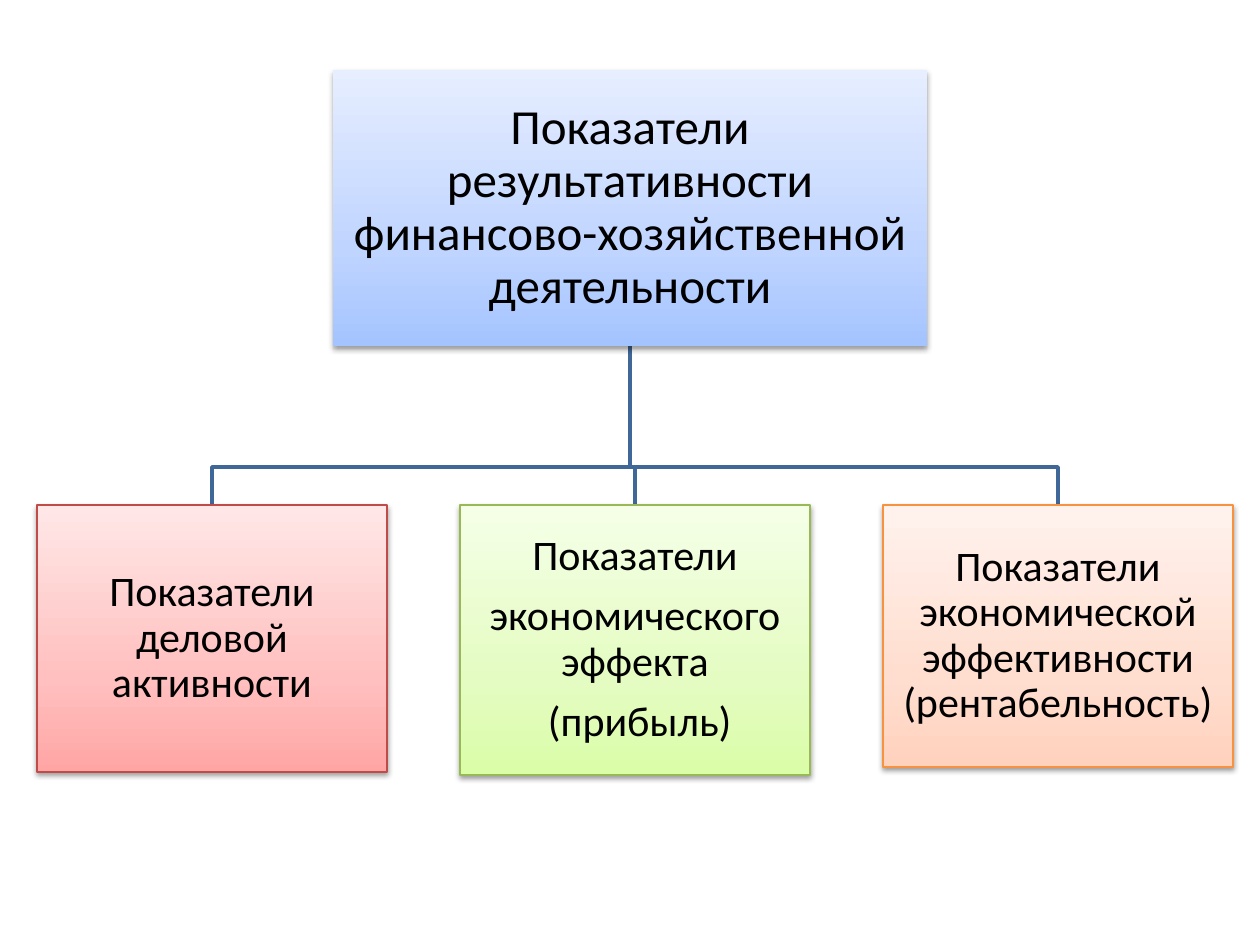
from copy import deepcopy

from lxml import etree
from pptx import Presentation
from pptx.dml.color import RGBColor
from pptx.enum.shapes import MSO_SHAPE as Shape
from pptx.enum.text import MSO_ANCHOR as Anchor, PP_ALIGN as Align
from pptx.oxml.ns import qn
from pptx.util import Emu, Pt

PX = 914400 / 126
SLIDE_W, SLIDE_H = 1260, 945

WHITE = RGBColor(0xFF, 0xFF, 0xFF)
BLACK = RGBColor(0x00, 0x00, 0x00)
BRANCH = RGBColor(0x3F, 0x67, 0x97)
RED_LINE = RGBColor(0xBF, 0x4C, 0x48)
GREEN_LINE = RGBColor(0x98, 0xB9, 0x55)
ORANGE_LINE = RGBColor(0xF6, 0x92, 0x40)
# Gradients run from bottom to top.
BLUE = RGBColor(0xA4, 0xC4, 0xFF), RGBColor(0xBF, 0xD4, 0xFF), RGBColor(0xE6, 0xEE, 0xFF)
RED = RGBColor(0xFF, 0xA6, 0xA5), RGBColor(0xFF, 0xC0, 0xBF), RGBColor(0xFF, 0xE7, 0xE7)
GREEN = RGBColor(0xDA, 0xFD, 0xA7), RGBColor(0xE4, 0xFC, 0xC2), RGBColor(0xF5, 0xFF, 0xE7)
ORANGE = RGBColor(0xFF, 0xD2, 0xBD), RGBColor(0xFF, 0xDE, 0xD0), RGBColor(0xFF, 0xF2, 0xED)
GRADIENT_POSITIONS = 0, 0.35, 1

ROOT_X, ROOT_Y, ROOT_W, ROOT_H = 333, 70, 594, 276
CHILD_X, CHILD_Y, CHILD_W, CHILD_PITCH = 37, 505, 350, 423
FORK_Y = 467

ROOT_TEXT = ["Показатели результативности финансово-хозяйственной деятельности"]
CHILDREN = [
    (["Показатели деловой активности"], 267, RED, RED_LINE),
    (["Показатели", "экономического эффекта", " (прибыль)"], 270, GREEN, GREEN_LINE),
    (["Показатели экономической эффективности (рентабельность)"], 262, ORANGE, ORANGE_LINE),
]


def px(length):
    return Emu(round(length * PX))


def apply(target, values):
    for name, value in values.items():
        setattr(target, name, value)


class Chart:
    """Draws the parts of a hierarchy on one slide in a shared style."""

    FONT = {"name": "Calibri"}
    FRAME = {"word_wrap": True, "vertical_anchor": Anchor.MIDDLE,
             "margin_left": px(2), "margin_right": px(2),
             "margin_top": px(2), "margin_bottom": px(2)}
    PARAGRAPH = {"alignment": Align.CENTER, "line_spacing": 0.9}
    SHADOW = {"blurRad": "40000", "dist": "20000", "dir": "5400000", "rotWithShape": "0"}

    def __init__(self, slide):
        self.slide = slide
        slide.background.fill.solid()
        slide.background.fill.fore_color.rgb = WHITE

    def branch(self, points):
        start, *rest = points
        builder = self.slide.shapes.build_freeform(*start, scale=PX)
        builder.add_line_segments(rest, close=False)
        path = builder.convert_to_shape()
        path.shadow.inherit = False
        path.fill.background()
        path.line.color.rgb = BRANCH
        path.line.width = Pt(2)

    def box(self, bounds, paragraphs, size, colours, outline=None):
        box = self.slide.shapes.add_shape(Shape.RECTANGLE, *map(px, bounds))
        self.gradient(box.fill, colours)
        self.shadow(box)
        if outline is None:
            box.line.fill.background()
        else:
            box.line.color.rgb = outline
            box.line.width = Pt(0.75)
        self.text(box.text_frame, paragraphs, size)

    def gradient(self, fill, colours):
        fill.gradient()
        fill.gradient_angle = 90
        stop_list = fill._xPr.find(qn("a:gradFill")).find(qn("a:gsLst"))
        stop_list.append(deepcopy(stop_list[0]))
        for stop, position, colour in zip(fill.gradient_stops, GRADIENT_POSITIONS, colours):
            stop.position = position
            stop.color.rgb = colour

    def shadow(self, box):
        box.shadow.inherit = False
        effects = box._element.spPr.find(qn("a:effectLst"))
        outer = etree.SubElement(effects, qn("a:outerShdw"), self.SHADOW)
        colour = etree.SubElement(outer, qn("a:srgbClr"), val=str(BLACK))
        etree.SubElement(colour, qn("a:alpha"), val="38000")

    def text(self, frame, paragraphs, size):
        apply(frame, self.FRAME)
        for index, wording in enumerate(paragraphs):
            paragraph = frame.add_paragraph() if index else frame.paragraphs[0]
            apply(paragraph, self.PARAGRAPH)
            paragraph.space_after = Pt(size * 0.35)
            run = paragraph.add_run()
            run.text = wording
            apply(run.font, self.FONT | {"size": Pt(size)})
            run.font.color.rgb = BLACK


def main():
    deck = Presentation()
    deck.slide_width, deck.slide_height = px(SLIDE_W), px(SLIDE_H)
    chart = Chart(deck.slides.add_slide(deck.slide_layouts[6]))

    root_centre = ROOT_X + ROOT_W // 2
    lefts = [CHILD_X + index * CHILD_PITCH for index in range(len(CHILDREN))]
    for left in lefts:
        centre = left + CHILD_W // 2
        chart.branch([(root_centre, ROOT_Y + ROOT_H), (root_centre, FORK_Y),
                      (centre, FORK_Y), (centre, CHILD_Y)])

    chart.box((ROOT_X, ROOT_Y, ROOT_W, ROOT_H), ROOT_TEXT, 28, BLUE)
    for left, (paragraphs, height, colours, outline) in zip(lefts, CHILDREN):
        chart.box((left, CHILD_Y, CHILD_W, height), paragraphs, 24, colours, outline)

    deck.save("out.pptx")


if __name__ == "__main__":
    main()
